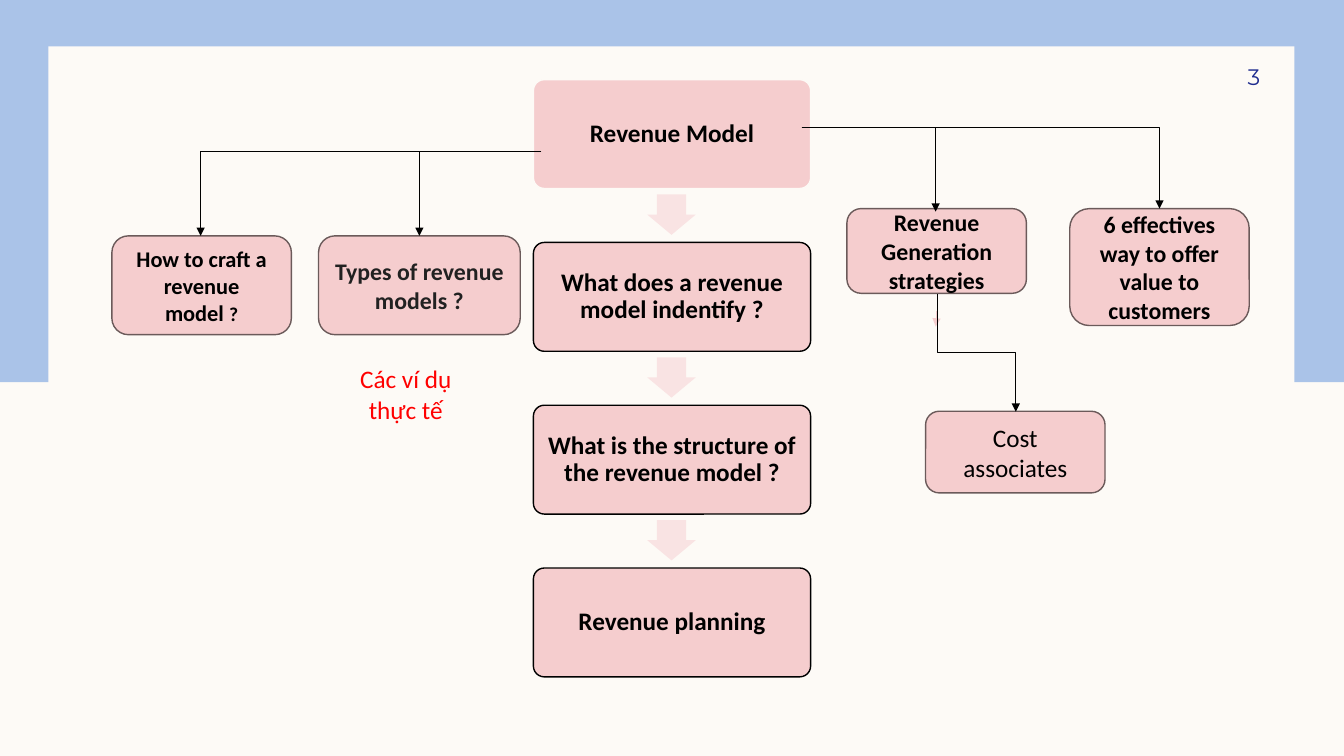
import pptx
import pptx.util
import pptx.dml.color
import pptx.enum.shapes
import pptx.enum.text
import pptx.oxml.ns
from lxml import etree

Inches = pptx.util.Inches
Pt = pptx.util.Pt
RGBColor = pptx.dml.color.RGBColor
SHAPE = pptx.enum.shapes.MSO_SHAPE
LINK = pptx.enum.shapes.MSO_CONNECTOR
ALIGN = pptx.enum.text.PP_ALIGN
ANCHOR = pptx.enum.text.MSO_ANCHOR
qn = pptx.oxml.ns.qn

CREAM = RGBColor(0xFD, 0xFA, 0xF6)
BLUE = RGBColor(0xAA, 0xC3, 0xE8)
NAVY = RGBColor(0x1F, 0x2C, 0x8F)
PINK = RGBColor(0xF5, 0xCD, 0xCE)
PALE = RGBColor(0xF9, 0xE3, 0xE3)
BROWN = RGBColor(0x6B, 0x5A, 0x5A)
BLACK = RGBColor(0, 0, 0)
DARK = RGBColor(0x21, 0x21, 0x21)
RED = RGBColor(0xFF, 0, 0)


class Board:
    """Draws the elements of one slide in a shared style."""

    def __init__(self, slide):
        self.slide = slide
        self.font = {"name": "Calibri", "size": Pt(18), "bold": False}

    def put(self, item, values):
        for name, value in values.items():
            setattr(item, name, value)

    def fill_text(self, shape, runs, color, align=ALIGN.CENTER, space=1.0, **frame):
        text = shape.text_frame
        self.put(text, {"word_wrap": True, "vertical_anchor": ANCHOR.MIDDLE, **frame})
        para = text.paragraphs[0]
        self.put(para, {"alignment": align, "line_spacing": space})
        for words, style in runs:
            run = para.add_run()
            run.text = words
            self.put(run.font, {**self.font, **style})
            run.font.color.rgb = color

    def shape(self, kind, box, fill, line=None, adjust=()):
        item = self.slide.shapes.add_shape(kind, *map(Inches, box))
        item.shadow.inherit = False
        item.fill.solid()
        item.fill.fore_color.rgb = fill
        if line is None:
            item.line.fill.background()
        else:
            item.line.color.rgb = line
            item.line.width = Pt(1)
        for place, value in enumerate(adjust):
            item.adjustments[place] = value
        return item

    def label(self, box, words, color, style=None, **rest):
        item = self.slide.shapes.add_textbox(*map(Inches, box))
        self.fill_text(item, [(words, style or {})], color, **rest)

    def step(self, top, words, line):
        item = self.shape(SHAPE.ROUNDED_RECTANGLE, (5.29, top, 2.75, 1.08), PINK, line, [0.1])
        sides = ("left", "right", "top", "bottom")
        inset = {"margin_" + side: Inches(0.07) for side in sides}
        self.fill_text(item, [(words, {"bold": True})], BLACK, space=0.9, **inset)

    def arrow(self, top):
        item = self.shape(SHAPE.RIGHT_ARROW, (6.46, top, 0.4, 0.48), PALE, adjust=[0.6, 0.5])
        item.rotation = 90

    def topic(self, box, runs, color=BLACK):
        item = self.shape(SHAPE.ROUNDED_RECTANGLE, box, PINK, BROWN)
        self.fill_text(item, runs, color)

    def link(self, box, kind, color=BLACK, **turn):
        left, top, width, height = box
        ends = map(Inches, (left, top, left + width, top + height))
        item = self.slide.shapes.add_connector(LINK.ELBOW, *ends)
        item.line.color.rgb = color
        item.line.width = Pt(0.5)
        props = item._element.spPr
        props.find(qn("a:prstGeom")).set("prst", kind)
        for name, value in turn.items():
            props.find(qn("a:xfrm")).set(name, str(value))
        etree.SubElement(props.find(qn("a:ln")), qn("a:tailEnd"), type="triangle")
        etree.SubElement(props, qn("a:effectLst"))


def main():
    deck = pptx.Presentation()
    deck.slide_width, deck.slide_height = Inches(13.33), Inches(7.5)
    slide = deck.slides.add_slide(deck.slide_layouts[6])
    slide.background.fill.solid()
    slide.background.fill.fore_color.rgb = CREAM
    board = Board(slide)

    board.shape(SHAPE.RECTANGLE, (-0.03, 0, 13.36, 3.79), BLUE)
    board.shape(SHAPE.RECTANGLE, (0.48, 0.46, 12.36, 6.59), CREAM)
    board.label((11.33, 0.5, 1.17, 0.52), "3", NAVY, {"name": "Montserrat", "size": Pt(16)},
                align=ALIGN.RIGHT, margin_right=0)

    steps = ("Revenue Model", "What does a revenue model indentify ?",
             "What is the structure of the revenue model ?", "Revenue planning")
    pitch = Inches(1.615) / Inches(1)
    for row, words in enumerate(steps):
        if row:
            board.arrow(1.89 + (row - 1) * pitch)
        board.step(0.79 + row * pitch, words, BLACK if row else CREAM)

    big = {"size": Pt(17), "bold": True}
    mid = {"size": Pt(16), "bold": True}
    small = {"size": Pt(14), "bold": True}
    board.topic((8.4, 2.07, 1.78, 0.84), [("Revenue Generation strategies", big)])
    board.topic((1.11, 2.34, 1.78, 0.98), [("How to craft a revenue model ", mid), ("?", small)])
    board.label((3.26, 3.56, 1.53, 0.71), "Các ví dụ thực tế", RED, vertical_anchor=ANCHOR.TOP)
    board.topic((9.18, 4.08, 1.78, 0.81), [("Cost associates", {})])
    board.topic((3.16, 2.34, 2, 0.98), [("Types of revenue models ?", big)], DARK)
    board.topic((10.61, 2.07, 1.78, 1.16),
                [("6 effectives way to offer value to customers", big)])

    turn = 60000
    board.link((1.99, 1.5, 3.38, 0.84), "bentConnector2", rot=180 * turn, flipV=1)
    board.link((4.16, 1.5, 0, 0.84), "line")
    board.link((7.95, 1.26, 3.55, 0.81), "bentConnector2")
    board.link((7.95, 1.26, 1.33, 0.84), "bentConnector2")
    board.link((9.21, 3.16, 0.15, 0.01), "bentConnector3", PINK, rot=90 * turn)
    board.link((9.1, 3.11, 1.17, 0.78), "bentConnector3", rot=270 * turn, flipH=1)
    deck.save("out.pptx")


if __name__ == "__main__":
    main()
